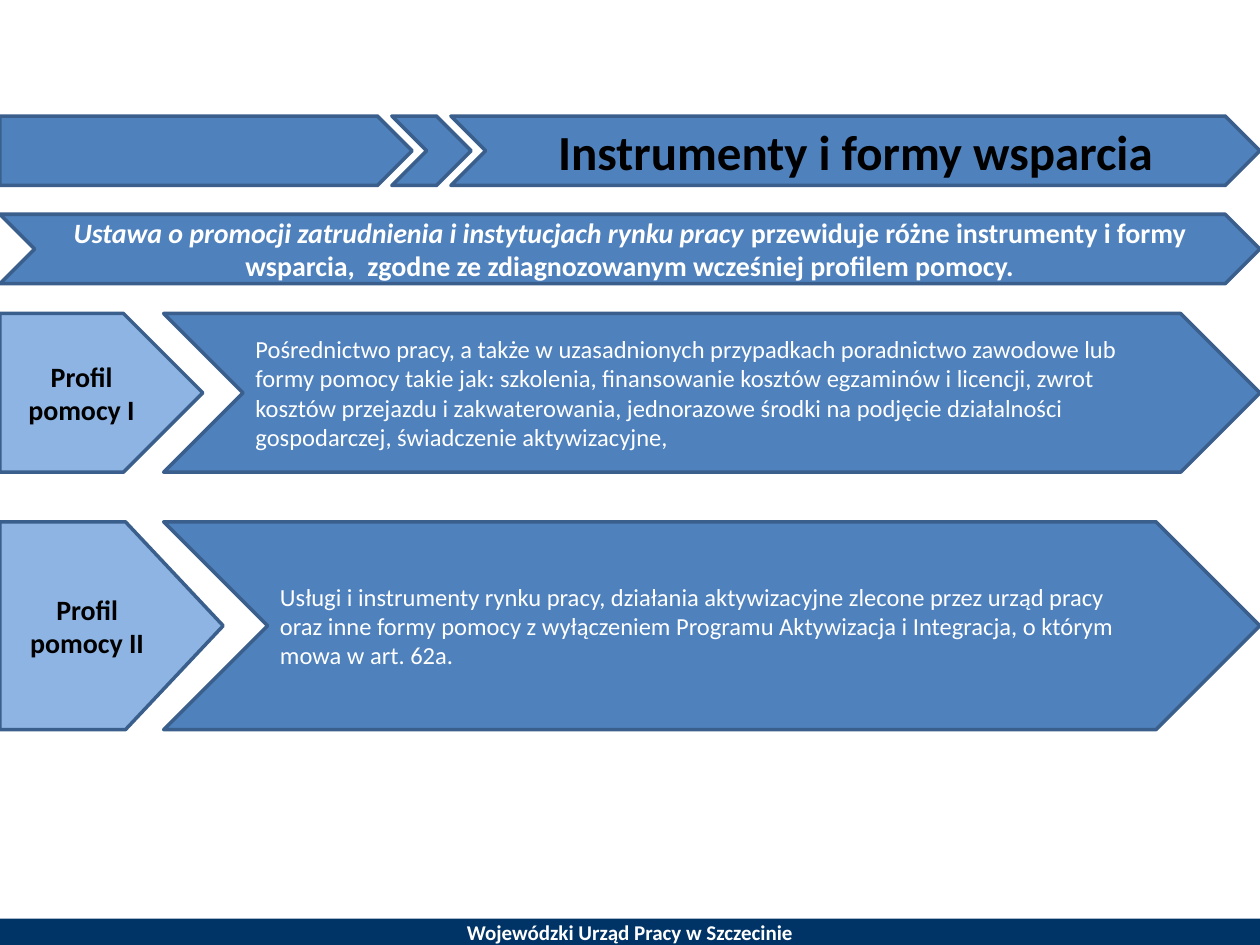
from pptx import Presentation
from pptx.dml.color import RGBColor
from pptx.enum.shapes import MSO_SHAPE
from pptx.enum.text import MSO_ANCHOR, MSO_AUTO_SIZE, PP_ALIGN
from pptx.util import Cm, Pt

RECT, PLATE, CHEVRON = MSO_SHAPE.RECTANGLE, MSO_SHAPE.PENTAGON, MSO_SHAPE.CHEVRON
TOP, MIDDLE = MSO_ANCHOR.TOP, MSO_ANCHOR.MIDDLE
LEFT, CENTER = PP_ALIGN.LEFT, PP_ALIGN.CENTER
COLORS = {"blue": "4F81BD", "light": "8EB4E3", "edge": "3A5F8C",
          "navy": "003366", "white": "FFFFFF", "black": "000000"}
WIDTH, HEIGHT = 25.4, 19.05


def draw(kind, left, top, width, height, fill="blue", edge="edge"):
    shape = slide.shapes.add_shape(kind, Cm(left), Cm(top), Cm(width), Cm(height))
    shape.shadow.inherit = False
    shape.fill.solid()
    shape.fill.fore_color.rgb = RGBColor.from_string(COLORS[fill])
    if edge:
        shape.line.color.rgb = RGBColor.from_string(COLORS[edge])
        shape.line.width = Pt(2)
    else:
        shape.line.fill.background()
    return shape


def write(shape, text, size=16, color="white", bold=True, italic=False,
          align=CENTER, anchor=MIDDLE, wrap=True):
    """Append a run to the first paragraph of the shape."""
    frame = shape.text_frame
    frame.word_wrap = wrap
    frame.vertical_anchor = anchor
    par = frame.paragraphs[0]
    par.alignment = align
    run = par.add_run()
    run.text = text
    font = run.font
    font.name, font.size, font.bold, font.italic = "Calibri", Pt(size), bold, italic
    font.color.rgb = RGBColor.from_string(COLORS[color])


deck = Presentation()
deck.slide_width, deck.slide_height = Cm(WIDTH), Cm(HEIGHT)
slide = deck.slides.add_slide(deck.slide_layouts[5])

# Footer bar
bar = draw(RECT, 0, 18.52, WIDTH, 0.53, fill="navy", edge=None)
write(bar, "Wojewódzki Urząd Pracy w Szczecinie", size=12, wrap=False)

# Heading band
band, thick = 2.34, 1.4
start = 9.09
draw(PLATE, 0, band, 8.31, thick)
draw(CHEVRON, start, band, WIDTH - start, thick)
draw(CHEVRON, 7.9, band, 1.6, thick)

title = slide.shapes.title
title.left, title.top = Cm(start), Cm(band)
title.width, title.height = Cm(WIDTH - start), Cm(thick)
frame = title.text_frame
frame.auto_size = MSO_AUTO_SIZE.NONE
frame.margin_top, frame.margin_bottom = Cm(0.1), 0
write(title, "Instrumenty i formy wsparcia", size=28, color="black", anchor=TOP)
tree = title.element.getparent()
tree.append(title.element)  # bring the title in front of the band

# Legal basis
basis = draw(CHEVRON, 0, 4.32, WIDTH, thick)
write(basis, "Ustawa o promocji zatrudnienia i instytucjach rynku pracy ", italic=True)
write(basis, "przewiduje różne instrumenty i formy wsparcia,  zgodne ze "
             "zdiagnozowanym wcześniej profilem pomocy.")

# Profiles: label, top, height, label width, point depth, description
rows = [
    ("Profil pomocy I", 6.32, 3.2, 4.09, 0.5,
     "Pośrednictwo pracy, a także w uzasadnionych przypadkach poradnictwo "
     "zawodowe lub formy pomocy takie jak: szkolenia, finansowanie kosztów "
     "egzaminów i licencji, zwrot kosztów przejazdu i zakwaterowania, "
     "jednorazowe środki na podjęcie działalności gospodarczej, świadczenie "
     "aktywizacyjne,"),
    ("Profil pomocy II", 10.52, 4.19, 4.5, 0.47,
     "Usługi i instrumenty rynku pracy, działania aktywizacyjne zlecone przez "
     "urząd pracy oraz inne formy pomocy z wyłączeniem Programu Aktywizacja i "
     "Integracja, o którym mowa w art. 62a."),
]
inset = 3.3
for name, top, height, width, depth, text in rows:
    arrow = draw(CHEVRON, inset, top, WIDTH - inset, height)
    write(arrow, text, size=14, bold=False, align=LEFT)
    label = draw(PLATE, 0, top, width, height, fill="light")
    label.adjustments[0] = depth
    write(label, name, color="black")

deck.save("out.pptx")
